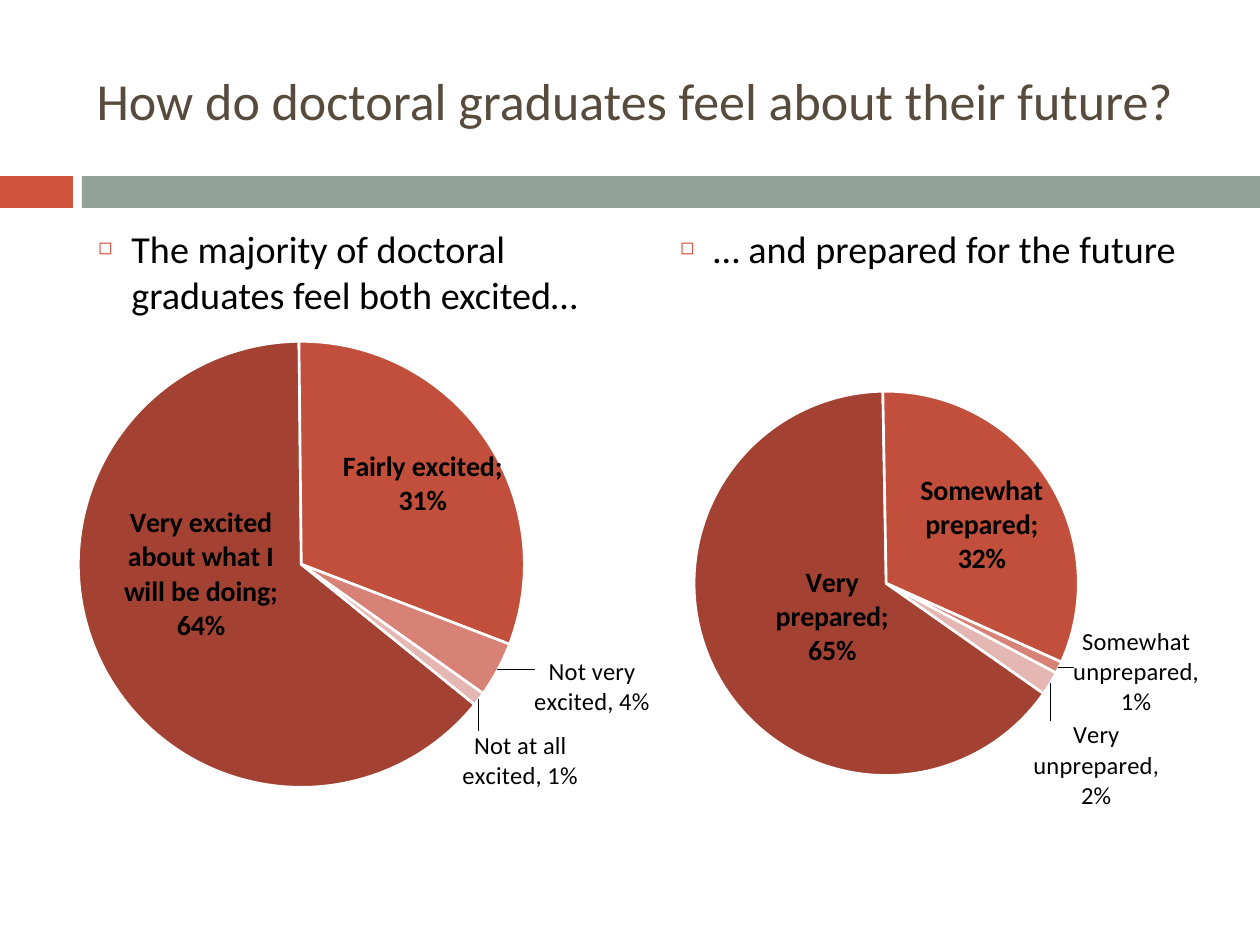
from lxml.etree import SubElement as Sub
from pptx import Presentation
from pptx.chart.data import CategoryChartData as Data
from pptx.dml.color import RGBColor
from pptx.enum.chart import XL_CHART_TYPE as Kind, XL_LABEL_POSITION as Pos
from pptx.enum.shapes import MSO_SHAPE as Form
from pptx.enum.text import MSO_ANCHOR as Anchor, PP_ALIGN as Align
from pptx.oxml.ns import qn
from pptx.util import Pt

PX = 914400 // 126
REDS = ["A34232", "C24F3B", "D78177", "E5B7B3"]


def px(*vals):
    return [v * PX for v in vals]


def tint(code):
    return RGBColor.from_string(code)


class Deck:
    face = "Calibri"
    ink = "000000"
    red = "CF543F"

    def __init__(self):
        self.prs = Presentation()
        self.prs.slide_width, self.prs.slide_height = px(1260, 945)
        self.slide = self.prs.slides.add_slide(self.prs.slide_layouts[5])

    def style(self, font, size, code, bold=False):
        font.name, font.size, font.bold = self.face, Pt(size), bold
        font.color.rgb = tint(code)

    def add_text(self, para, text, size, code):
        run = para.add_run()
        run.text = text
        self.style(run.font, size, code)

    def title(self, text, box):
        head = self.slide.shapes.title
        head.left, head.top, head.width, head.height = px(*box)
        frame = head.text_frame
        frame.word_wrap = True
        frame.vertical_anchor = Anchor.MIDDLE
        para = frame.paragraphs[0]
        para.alignment = Align.LEFT
        self.add_text(para, text, 29.7, "564B3C")

    def bar(self, box, code):
        rect = self.slide.shapes.add_shape(Form.RECTANGLE, *px(*box))
        rect.shadow.inherit = False
        rect.fill.solid()
        rect.fill.fore_color.rgb = tint(code)
        rect.line.fill.background()

    def bullet(self, text, box):
        frame = self.slide.shapes.add_textbox(*px(*box)).text_frame
        frame.word_wrap = True
        para = frame.paragraphs[0]
        para.space_before = Pt(5.2)
        self.add_text(para, text, 21.8, self.ink)
        props = para._p.get_or_add_pPr()
        props.set("marL", str(33 * PX))
        props.set("indent", str(-33 * PX))
        Sub(Sub(props, qn("a:buClr")), qn("a:srgbClr"), val=self.red)
        Sub(props, qn("a:buSzPct"), val="60000")
        Sub(props, qn("a:buFont"), typeface=self.face)
        Sub(props, qn("a:buChar"), char="◻")

    def place(self, node, spot, inner=False):
        layout = node.makeelement(qn("c:layout"), {})
        man = Sub(layout, qn("c:manualLayout"))
        if inner:
            Sub(man, qn("c:layoutTarget"), val="inner")
            for key in ("xMode", "yMode"):
                Sub(man, qn("c:" + key), val="edge")
        for key, val in zip("xywh", spot):
            Sub(man, qn("c:" + key), val=str(val))
        for old in node.findall(qn("c:layout")):
            node.remove(old)
        node.insert(0 if inner else 1, layout)

    def label(self, point, shift, text):
        tag = point.data_label
        if text:
            para = tag.text_frame.paragraphs[0]
            self.add_text(para, text, 14, self.ink)
            tag.position = Pos.OUTSIDE_END
        else:
            self.style(tag.font, 16, self.ink, True)
            tag.position = Pos.CENTER
        node = tag._dLbl
        node.find(qn("c:showCatName")).set("val", "1")
        node.find(qn("c:showVal")).set("val", "1")
        Sub(node, qn("c:separator")).text = "; "
        self.place(node, shift)

    def pie(self, box, start, plot, rows):
        data = Data(number_format="0%")
        data.categories = [row[0] for row in rows]
        data.add_series("Series 1", [row[1] for row in rows])
        chart = self.slide.shapes.add_chart(Kind.PIE, *px(*box), data).chart
        chart.has_legend = chart.has_title = False
        self.style(chart.font, 10, self.ink)
        body = chart.plots[0]
        body.vary_by_categories = True
        series = body.series[0]
        tags = series.data_labels
        tags.show_value = tags.show_category_name = True
        tags.number_format, tags.number_format_is_linked = "0%", False
        self.style(tags.font, 16, self.ink, True)
        for i, (_, _, shift, text) in enumerate(rows):
            point = series.points[i]
            point.format.fill.solid()
            point.format.fill.fore_color.rgb = tint(REDS[i])
            point.format.line.color.rgb = tint("FFFFFF")
            point.format.line.width = Pt(1.5)
            self.label(point, shift, text)
        group = series._element.find(qn("c:dLbls"))
        lead = group.find(qn("c:showLeaderLines"))
        if lead is None:
            lead = Sub(group, qn("c:showLeaderLines"))
        lead.set("val", "1")
        root = body._element
        turn = root.find(qn("c:firstSliceAng"))
        if turn is None:
            turn = Sub(root, qn("c:firstSliceAng"))
        turn.set("val", str(start))
        self.place(root.getparent(), plot, inner=True)


def main():
    deck = Deck()
    deck.bar((0, 176, 73, 32), deck.red)
    deck.bar((82, 176, 1178, 32), "93A299")
    deck.title("How do doctoral graduates feel about their future?",
               (84, 32, 1124, 136))
    deck.bullet("The majority of doctoral graduates feel both excited…",
                (86, 219, 535, 630))
    deck.bullet("… and prepared for the future", (668, 219, 535, 630))
    deck.pie((-79, 287, 746, 544), 129, (0.21, 0.1, 0.6, 0.82), [
        ("Very excited about what I will be doing", 0.64, (0, -0.07), ""),
        ("Fairly excited", 0.31, (0.04, -0.03), ""),
        ("Not very excited", 0.04, (0.04, -0.03), "Not very excited, 4%"),
        ("Not at all excited", 0.01, (-0.03, 0.05), "Not at all excited, 1%"),
    ])
    deck.pie((508, 287, 772, 549), 125, (0.24, 0.19, 0.5, 0.7), [
        ("Very prepared", 0.65, (0.04, -0.02), ""),
        ("Somewhat prepared", 0.32, (0.02, -0.01), ""),
        ("Somewhat unprepared", 0.01, (0.01, -0.08),
         "Somewhat unprepared, 1%"),
        ("Very unprepared", 0.02, (-0.03, 0.06), "Very unprepared, 2%"),
    ])
    deck.prs.save("out.pptx")


if __name__ == "__main__":
    main()
